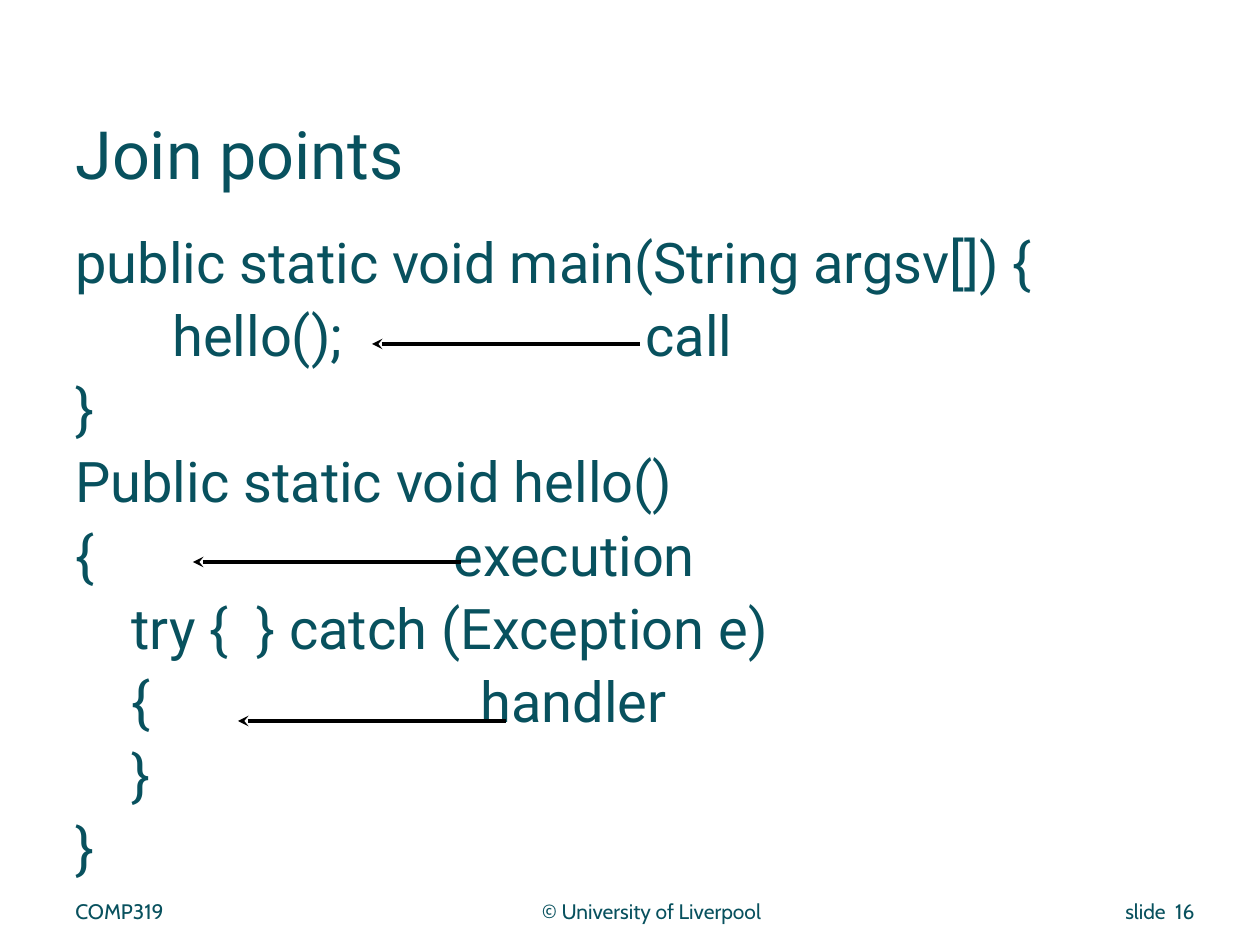
from dataclasses import dataclass

from lxml import etree
from pptx import Presentation, util as u
from pptx.dml.color import RGBColor
from pptx.enum import shapes, text
from pptx.oxml.ns import qn

# Content: code lines as (text, tab stops in px)
TITLE = "Join points"
INDENT = 56
CODE = [
    ("public static void main(String argsv[]) {", ()),
    ("\thello();\tcall", (97, 570)),
    ("}", ()),
    ("Public static void hello()", ()),
    ("{\texecution", (378,)),
    ("\ttry {  } catch (Exception e)", (INDENT,)),
    ("\t{\thandler", (INDENT, 405)),
    ("\t}", (INDENT,)),
    ("}", ()),
]
FOOTERS = [
    ("COMP319", (63, 892, 420, 53), text.PP_ALIGN.LEFT),
    ("© University of Liverpool", (504, 892, 295, 53), text.PP_ALIGN.CENTER),
    ("slide  16", (1018, 892, 189, 42), text.PP_ALIGN.RIGHT),
]
ARROW_LENGTH = 268
ARROW_TIPS = [(372, 344), (193, 562), (238, 721)]


@dataclass(frozen=True)
class Theme:
    ink: RGBColor = RGBColor(0x08, 0x51, 0x5E)
    arrow: RGBColor = RGBColor(0, 0, 0)
    main_font: str = "Roboto"
    footer_font: str = "Cabin"
    title_size: int = 38
    code_size: int = 32
    footer_size: int = 12


THEME = Theme()


def px(value):
    return u.Emu(round(value * u.Inches(1) / 126))


def set_all(target, **values):
    for name, value in values.items():
        setattr(target, name, value)


def add_text(slide, box, lines, font, size, anchor=text.MSO_ANCHOR.TOP, **layout):
    frame = slide.shapes.add_textbox(*map(px, box)).text_frame
    set_all(frame, word_wrap=True, vertical_anchor=anchor)
    for index, (content, stops) in enumerate(lines):
        paragraph = frame.add_paragraph() if index else frame.paragraphs[0]
        set_all(paragraph, **layout)
        run = paragraph.add_run()
        run.text = content
        set_all(run.font, name=font, size=u.Pt(size))
        run.font.color.rgb = THEME.ink
        if stops:
            tabs = etree.SubElement(paragraph._p.get_or_add_pPr(), qn("a:tabLst"))
            for stop in stops:
                etree.SubElement(tabs, qn("a:tab"), pos=str(px(stop)), algn="l")


def add_arrow(slide, x, y):
    arrow = slide.shapes.add_connector(
        shapes.MSO_CONNECTOR.STRAIGHT, px(x), px(y), px(x + ARROW_LENGTH), px(y))
    arrow.line.width = u.Pt(2)
    arrow.line.color.rgb = THEME.arrow
    etree.SubElement(arrow.line._get_or_add_ln(), qn("a:headEnd"), type="stealth")
    etree.SubElement(arrow._element.spPr, qn("a:effectLst"))


def main():
    presentation = Presentation()
    set_all(presentation, slide_width=px(1260), slide_height=px(945))
    slide = presentation.slides.add_slide(presentation.slide_layouts[6])

    # Title and code
    add_text(slide, (63, 107, 1134, 91), [(TITLE, ())], THEME.main_font,
             THEME.title_size, text.MSO_ANCHOR.MIDDLE)
    add_text(slide, (63, 229, 1081, 630), CODE, THEME.main_font, THEME.code_size,
             line_spacing=0.9, space_before=u.Pt(7.2))

    # Footer
    for content, box, alignment in FOOTERS:
        add_text(slide, box, [(content, ())], THEME.footer_font,
                 THEME.footer_size, alignment=alignment)

    # Arrows from the labels to the join points
    for x, y in ARROW_TIPS:
        add_arrow(slide, x, y)

    presentation.save("out.pptx")


if __name__ == "__main__":
    main()
